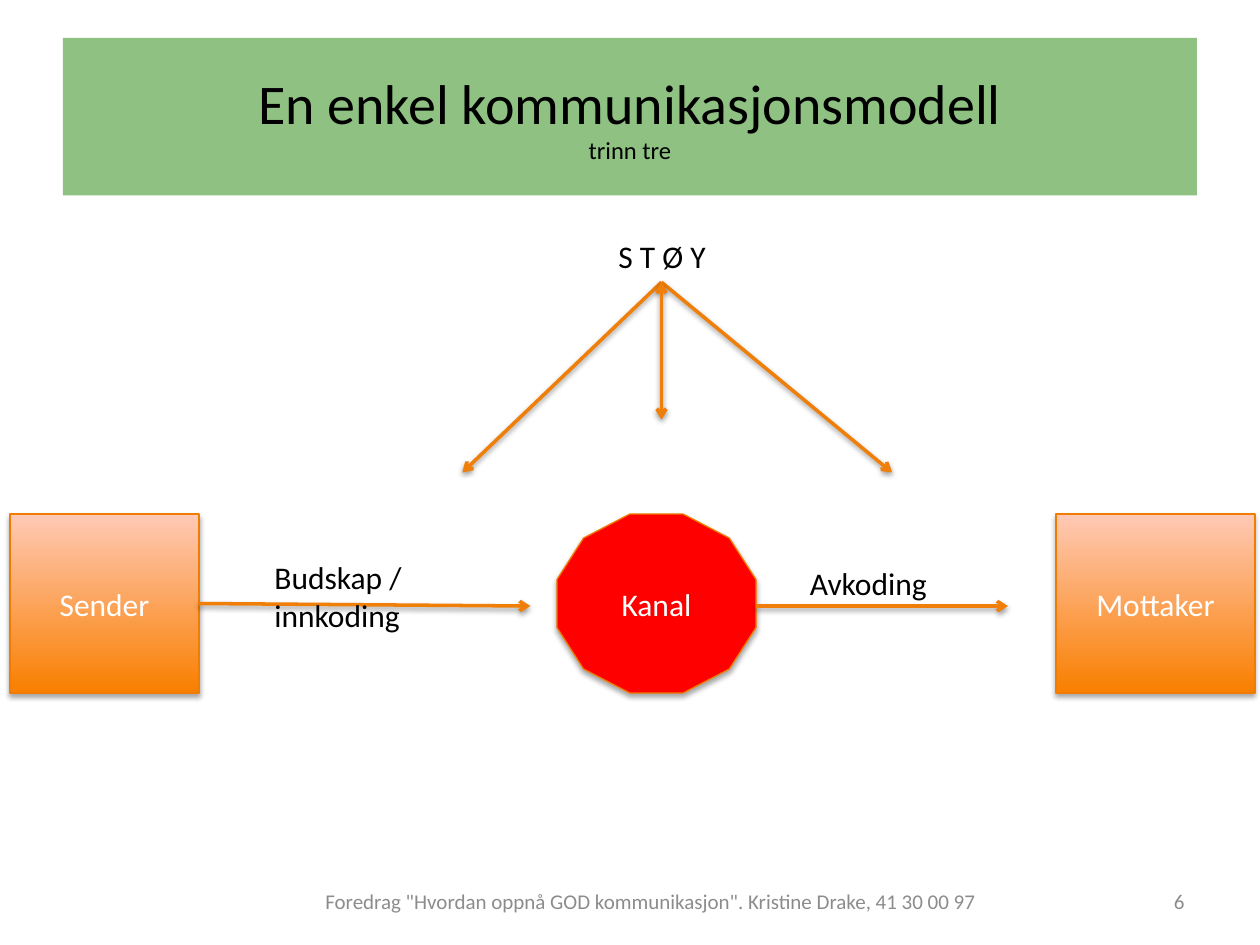
import lxml.etree
import pptx
import pptx.dml.color
import pptx.enum.shapes
import pptx.enum.text
import pptx.oxml
import pptx.oxml.ns
import pptx.util

Inches = pptx.util.Inches
Pt = pptx.util.Pt
SHAPE = pptx.enum.shapes.MSO_SHAPE
ALIGN = pptx.enum.text.PP_ALIGN
ANCHOR = pptx.enum.text.MSO_ANCHOR


def color(hex_code):
    return pptx.dml.color.RGBColor.from_string(hex_code)


def write(shape, runs, align, anchor):
    """Fill a shape with one paragraph of (text, size, colour) runs, one line each."""
    frame = shape.text_frame
    frame.word_wrap = True
    frame.vertical_anchor = anchor
    paragraph = frame.paragraphs[0]
    paragraph.alignment = align
    for position, (text, size, hex_code) in enumerate(runs):
        if position:
            paragraph.add_line_break()
        run = paragraph.add_run()
        run.text = text
        run.font.name = "Calibri"
        run.font.size = Pt(size)
        run.font.color.rgb = color(hex_code)


SHADOW = (
    '<a:effectLst xmlns:a="http://schemas.openxmlformats.org/drawingml/2006/main">'
    '<a:outerShdw blurRad="{blur}" dist="{distance}" dir="5400000" rotWithShape="0">'
    '<a:srgbClr val="000000"><a:alpha val="{alpha}"/></a:srgbClr>'
    "</a:outerShdw></a:effectLst>"
)

deck = pptx.Presentation()
deck.slide_width = Inches(10)
deck.slide_height = Inches(7.5)
slide = deck.slides.add_slide(deck.slide_layouts[6])

# Title band
title = slide.shapes.add_shape(
    SHAPE.RECTANGLE, Inches(0.5), Inches(0.3), Inches(9), Inches(1.25))
title.shadow.inherit = False
title.fill.solid()
title.fill.fore_color.rgb = color("8EC182")
title.line.fill.background()
write(title, [("En enkel kommunikasjonsmodell", 32, "000000"),
              ("trinn tre", 14, "000000")], ALIGN.CENTER, ANCHOR.MIDDLE)

# Sender, channel and receiver
for name, preset, left, width in [
    ("Sender", SHAPE.RECTANGLE, 0.08, 1.5),
    ("Mottaker", SHAPE.RECTANGLE, 8.38, 1.58),
    ("Kanal", SHAPE.DODECAGON, 4.42, 1.58),
]:
    party = slide.shapes.add_shape(
        preset, Inches(left), Inches(4.08), Inches(width), Inches(1.42))
    if preset == SHAPE.DODECAGON:
        party.fill.solid()
        party.fill.fore_color.rgb = color("FF0000")
    else:
        party.fill.gradient()
        party.fill.gradient_angle = 90
        for stop, hex_code in zip(party.fill.gradient_stops, ["F97F00", "FFC9B5"]):
            stop.color.rgb = color(hex_code)
    party.line.color.rgb = color("F07C03")
    party.line.width = Pt(0.75)
    party._element.spPr.append(pptx.oxml.parse_xml(
        SHADOW.format(blur=Pt(3.1), distance=Pt(1.8), alpha=35000)))
    write(party, [(name, 18, "FFFFFF")], ALIGN.CENTER, ANCHOR.MIDDLE)

# Message flow, then noise spreading from its label
noise = (5.25, 2.24)
for start, end, arrow_ends in [
    ((1.58, 4.79), (4.21, 4.81), ["tailEnd"]),
    ((6, 4.81), (8, 4.81), ["tailEnd"]),
    (noise, (3.67, 3.75), ["tailEnd"]),
    (noise, (7.08, 3.75), ["tailEnd"]),
    (noise, (5.25, 3.33), ["headEnd", "tailEnd"]),
]:
    arrow = slide.shapes.add_connector(
        pptx.enum.shapes.MSO_CONNECTOR.STRAIGHT,
        *[Inches(value) for value in start + end])
    arrow.line.color.rgb = color("F07F09")
    arrow.line.width = Pt(2)
    for arrow_end in arrow_ends:
        lxml.etree.SubElement(arrow.line._get_or_add_ln(),
                              pptx.oxml.ns.qn("a:" + arrow_end), type="arrow")
    arrow._element.spPr.append(pptx.oxml.parse_xml(
        SHADOW.format(blur=Pt(3.1), distance=Pt(1.6), alpha=38000)))

# Labels and footer
footer = 'Foredrag "Hvordan oppnå GOD kommunikasjon". Kristine Drake, 41 30 00 97'
for text, left, top, width, height, size, hex_code, align, anchor in [
    ("S T Ø Y", 3.67, 1.83, 3.17, 0.4, 18, "000000", ALIGN.CENTER, ANCHOR.TOP),
    ("Budskap / innkoding", 2.08, 4.38, 1.5, 0.71, 18, "000000", ALIGN.LEFT, ANCHOR.TOP),
    ("Avkoding", 6.33, 4.43, 1.5, 0.4, 18, "000000", ALIGN.LEFT, ANCHOR.TOP),
    (footer, 2.33, 6.95, 5.67, 0.4, 12, "8C8C8C", ALIGN.CENTER, ANCHOR.MIDDLE),
    ("6", 8.58, 6.95, 0.92, 0.4, 12, "8C8C8C", ALIGN.RIGHT, ANCHOR.MIDDLE),
]:
    label = slide.shapes.add_textbox(
        Inches(left), Inches(top), Inches(width), Inches(height))
    write(label, [(text, size, hex_code)], align, anchor)

deck.save("out.pptx")
